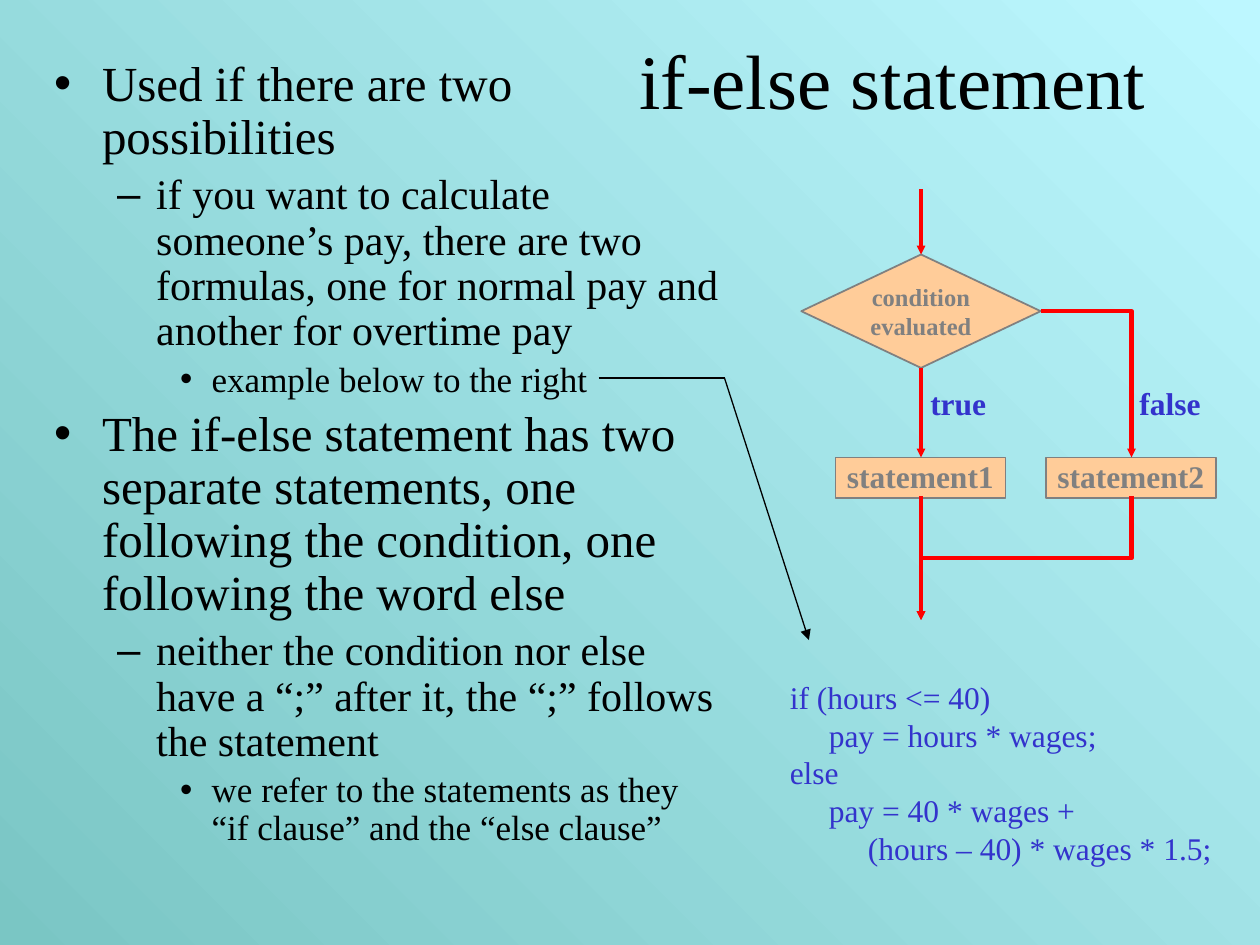
from lxml import etree
from pptx import Presentation
from pptx.dml.color import RGBColor
from pptx.enum.shapes import MSO_CONNECTOR, MSO_SHAPE
from pptx.enum.text import MSO_ANCHOR, MSO_AUTO_SIZE, PP_ALIGN
from pptx.oxml.ns import qn
from pptx.util import Inches, Pt

FONT = "Times New Roman"
BLACK, RED, BLUE = "000000", "FF0000", "3333CC"
PEACH, GRAY = "FFCC99", "808080"

# Text, level
POINTS = [
    ("Used if there are two possibilities", 0),
    ("if you want to calculate someone’s pay, there are two formulas, "
     "one for normal pay and another for overtime pay", 1),
    ("example below to the right", 2),
    ("The if-else statement has two separate statements, one following "
     "the condition, one following the word else", 0),
    ("neither the condition nor else have a “;” after it, "
     "the “;” follows the statement", 1),
    ("we refer to the statements as they “if clause” and the “else clause”", 2),
]
# Size, left margin, hanging indent of each level
LEVELS = [(28, 0.38, -0.38), (24, 0.81, -0.31), (20, 1.25, -0.25)]
CODE = [
    ("if (hours <= 40)", 0),
    ("pay = hours * wages;", 1),
    ("else", 0),
    ("pay = 40 * wages +", 1),
    ("(hours – 40) * wages * 1.5;", 2),
]
STEP = 0.31


def color(code):
    return RGBColor.from_string(code)


def place(shape, box):
    shape.left, shape.top, shape.width, shape.height = map(Inches, box)


def write(par, text, size=18, ink=BLACK, bold=False, align=None,
          margin=None, hang=0, gap=None):
    run = par.add_run()
    run.text = text
    font = run.font
    font.name, font.size, font.bold = FONT, Pt(size), bold
    font.color.rgb = color(ink)
    par.alignment, par.line_spacing = align, gap
    if margin is not None:
        props = par._p.get_or_add_pPr()
        props.set("marL", str(Inches(margin)))
        props.set("indent", str(Inches(hang)))


def fill_frame(frame, rows):
    """Write one paragraph for each (text, format) row."""
    for i, (text, form) in enumerate(rows):
        par = frame.add_paragraph() if i else frame.paragraphs[0]
        write(par, text, **form)


def label(slide, box, lines, ink, size=18):
    frame = slide.shapes.add_textbox(*map(Inches, box)).text_frame
    frame.word_wrap = False
    frame.auto_size = MSO_AUTO_SIZE.SHAPE_TO_FIT_TEXT
    frame.vertical_anchor = MSO_ANCHOR.MIDDLE
    form = dict(size=size, ink=ink, bold=True, align=PP_ALIGN.CENTER)
    fill_frame(frame, [(line, form) for line in lines])


def node(slide, kind, box, lines, area, size=18):
    shape = slide.shapes.add_shape(kind, *map(Inches, box))
    shape.shadow.inherit = False
    shape.fill.solid()
    shape.fill.fore_color.rgb = color(PEACH)
    shape.line.color.rgb = color(GRAY)
    shape.line.width = Pt(1)
    label(slide, area, lines, GRAY, size)


def link(slide, start, end, ink=RED, width=2.5, head="sm",
         kind=MSO_CONNECTOR.STRAIGHT):
    line = slide.shapes.add_connector(kind, *map(Inches, start + end))
    line.line.color.rgb = color(ink)
    line.line.width = Pt(width)
    if head:
        etree.SubElement(line.line._get_or_add_ln(), qn("a:tailEnd"),
                         type="triangle", w=head, len=head)
    etree.SubElement(line._element.spPr, qn("a:effectLst"))
    return line


def add_title(slide, box):
    title = slide.shapes.title
    place(title, box)
    frame = title.text_frame
    frame.auto_size = MSO_AUTO_SIZE.NONE
    frame.vertical_anchor = MSO_ANCHOR.MIDDLE
    write(frame.paragraphs[0], "if-else statement", size=44,
          align=PP_ALIGN.CENTER)


def add_points(slide, box):
    body = slide.placeholders[1]
    place(body, box)
    frame = body.text_frame
    frame.auto_size = MSO_AUTO_SIZE.NONE
    rows = []
    for text, level in POINTS:
        size, margin, hang = LEVELS[level]
        rows.append((text, dict(size=size, margin=margin, hang=hang, gap=0.9)))
    fill_frame(frame, rows)
    for par, (_, level) in zip(frame.paragraphs, POINTS):
        par.level = level


def add_chart(slide, box):
    """Draw the flow chart: a condition with a true and a false branch."""
    left, top, wide, high = box
    mid, side = left + 0.81, left + 2.48
    fork, foot, base, end = top + 0.97, top + 2.13, top + 2.44, top + high
    # Half sizes of the diamond, which leave room for both lines
    half, rise = 0.95, 0.45

    node(slide, MSO_SHAPE.DIAMOND,
         (mid - half, fork - rise, 2 * half, 2 * rise),
         ["condition", "evaluated"], (mid - 0.5, fork - 0.28, 1, 0.56), 14)
    for x, name in ((mid, "statement1"), (side, "statement2")):
        node(slide, MSO_SHAPE.RECTANGLE, (x - 0.68, foot, 1.35, 0.32),
             [name], (x - 0.69, foot - 0.05, 1.37, 0.4))
    label(slide, (mid - 0.03, top + 1.5, 0.65, 0.4), ["true"], BLUE)
    label(slide, (side - 0.04, top + 1.5, 0.69, 0.4), ["false"], BLUE)

    for start, stop in ((top, fork - rise), (fork + rise, foot), (base, end)):
        link(slide, (mid, start), (mid, stop))

    bend = link(slide, (mid + half, fork), (side, foot),
                kind=MSO_CONNECTOR.ELBOW)
    bend.element.spPr.find(qn("a:prstGeom")).set("prst", "bentConnector2")

    # The joining line is a quarter turn of an elbow, so its sides swap
    drop, span = end - base, side - mid
    x, y = (mid + side - drop) / 2, (base + end - span) / 2
    join = link(slide, (x, y), (x + drop, y + span), kind=MSO_CONNECTOR.ELBOW)
    join.element.spPr.find(qn("a:xfrm")).set("rot", str(90 * 60000))


def add_code(slide, box):
    frame = slide.shapes.add_textbox(*map(Inches, box)).text_frame
    frame.word_wrap = False
    frame.auto_size = MSO_AUTO_SIZE.SHAPE_TO_FIT_TEXT
    fill_frame(frame, [(text, dict(ink=BLUE, margin=STEP * depth))
                       for text, depth in CODE])


def add_pointer(slide, box):
    """Lead from the example bullet to the code."""
    left, top, wide, high = box
    turn = (left + 1, top)
    link(slide, (left, top), turn, BLACK, 0.75, head=None)
    link(slide, turn, (left + wide, top + high), BLACK, 0.75, head="med")


def paint(slide):
    fill = slide.background.fill
    fill.gradient()
    fill.gradient_angle = 45
    for stop, code, spot in zip(fill.gradient_stops, ("7AC6C4", "BDF7FF"),
                                (0, 1)):
        stop.color.rgb = color(code)
        stop.position = spot


def main():
    deck = Presentation()
    deck.slide_width, deck.slide_height = Inches(10), Inches(7.5)
    slide = deck.slides.add_slide(deck.slide_layouts[1])
    paint(slide)
    add_title(slide, (4.92, 0, 4.33, 1.25))
    add_points(slide, (0.33, 0.42, 5.5, 6.83))
    add_chart(slide, (6.5, 1.5, 3.16, 3.42))
    add_code(slide, (6.17, 5.33, 3.56, 1.6))
    add_pointer(slide, (4.75, 3, 1.67, 2.08))
    deck.save("out.pptx")


if __name__ == "__main__":
    main()
